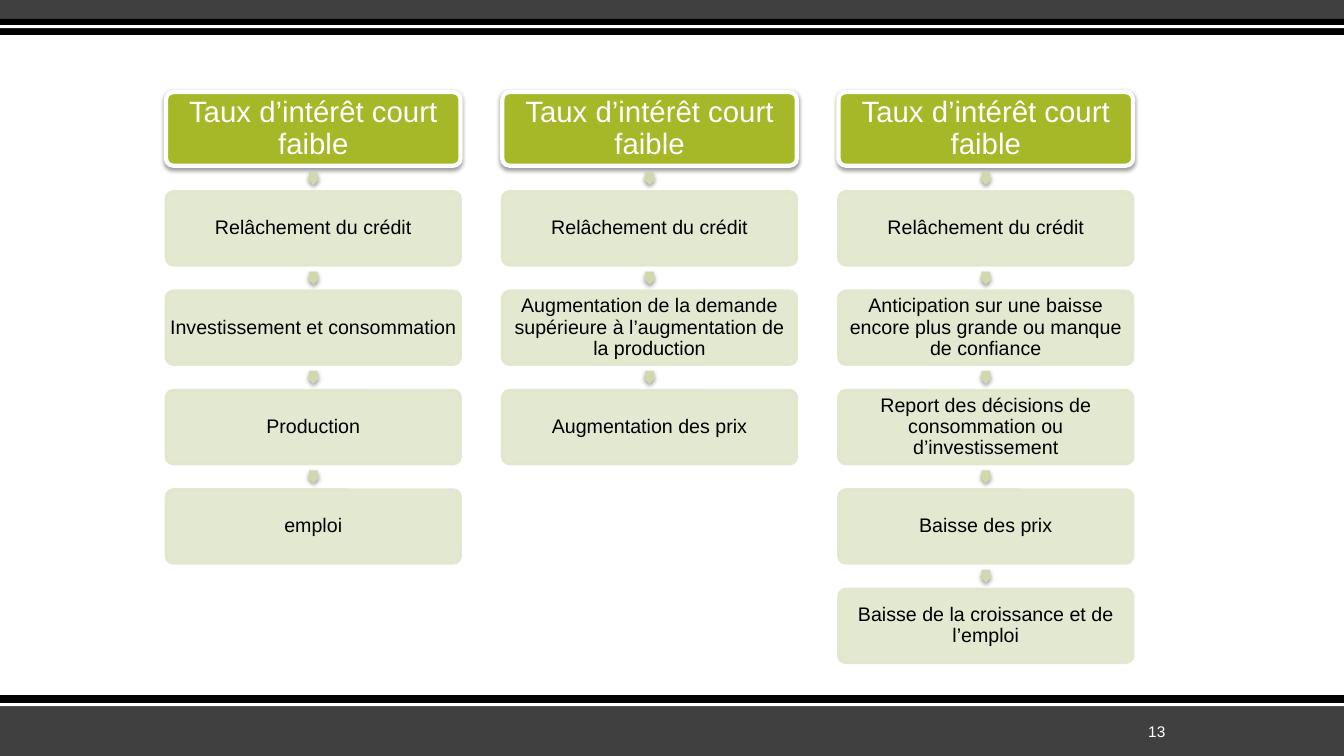
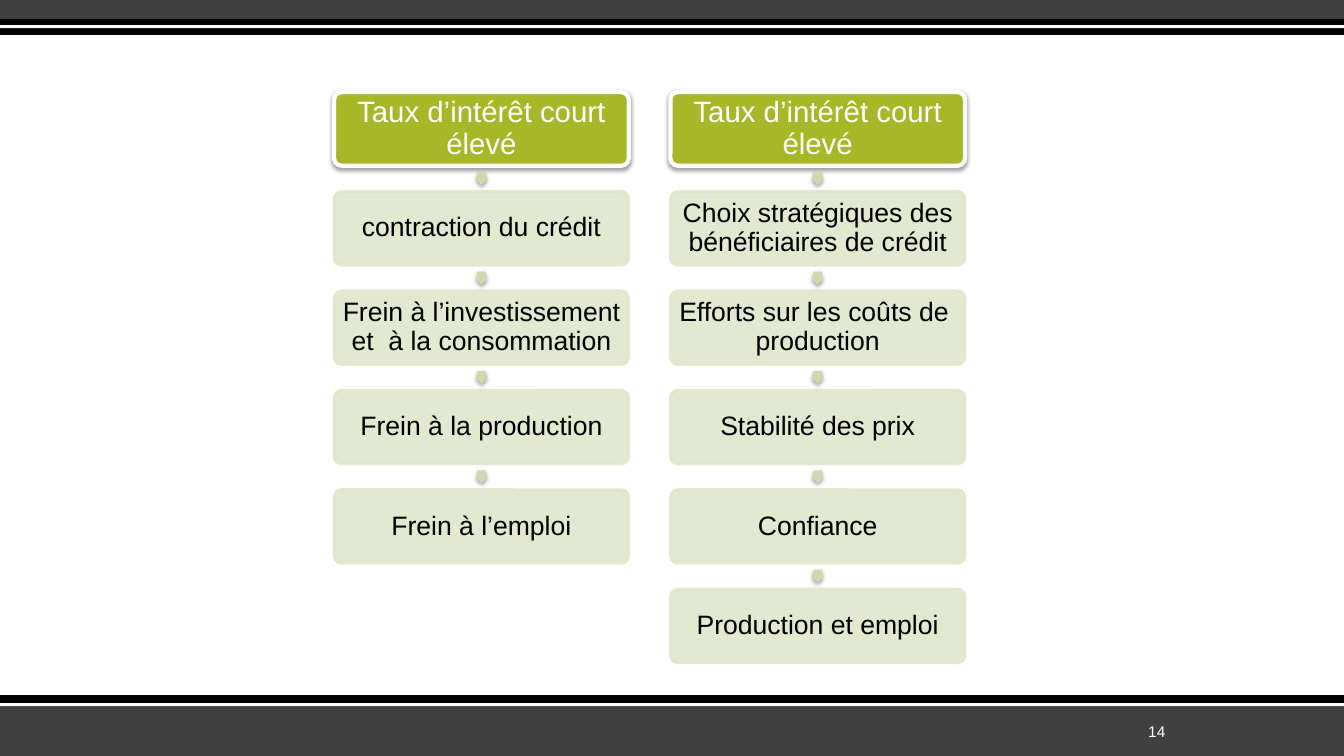
import pptx
import pptx.dml.color
import pptx.enum.shapes
import pptx.enum.text
import pptx.oxml
import pptx.oxml.ns
import pptx.util

Pt = pptx.util.Pt
SHAPES = pptx.enum.shapes.MSO_SHAPE
ALIGN = pptx.enum.text.PP_ALIGN

COLORS = {"band": "404040", "rule": "000000", "white": "FFFFFF", "header": "A6B727",
          "step": "E1E6CD", "arrow": "D0D8AD", "text": "000000"}
FONT = "Arial"
PAGE_WIDTH, PAGE_HEIGHT = 960, 540

# top, height, colour
BANDS = [
    (504, 36, "band"), (496.5, 8, "rule"), (502.2, 2.2, "white"),
    (0, 13.5, "band"), (13.5, 11.5, "rule"), (18, 2.2, "white"),
]

LOW, HIGH = "Taux d’intérêt court faible", "Taux d’intérêt court élevé"
SLIDES = [
    {"number": "13", "step_size": 14, "step_inset": 1.2, "chains": [
        (LOW, ["Relâchement du crédit", "Investissement et consommation",
               "Production", "emploi"]),
        (LOW, ["Relâchement du crédit",
               "Augmentation de la demande supérieure à l’augmentation de la production",
               "Augmentation des prix"]),
        (LOW, ["Relâchement du crédit",
               "Anticipation sur une baisse encore plus grande ou manque de confiance",
               "Report des décisions de consommation ou d’investissement",
               "Baisse des prix", "Baisse de la croissance et de l’emploi"]),
    ]},
    {"number": "14", "step_size": 19, "step_inset": 2, "chains": [
        (HIGH, ["contraction du crédit", "Frein à l’investissement et  à la consommation",
                "Frein à la production", "Frein à l’emploi"]),
        (HIGH, ["Choix stratégiques des bénéficiaires de crédit",
                "Efforts sur les coûts de  production", "Stabilité des prix",
                "Confiance", "Production et emploi"]),
    ]},
]

CHAINS_CENTER, CHAINS_TOP = 464, 65.8
BOX_WIDTH, BOX_HEIGHT = 210.4, 52.6
ARROW_SIZE = 9.2
COLUMN_PITCH = 240.2
ROW_PITCH = BOX_HEIGHT + 2 * ARROW_SIZE


def rgb(name):
    return pptx.dml.color.RGBColor.from_string(COLORS[name])


def add_filled(page, kind, left, top, width, height, color):
    shape = page.shapes.add_shape(kind, Pt(left), Pt(top), Pt(width), Pt(height))
    shape.shadow.inherit = False
    shape.fill.solid()
    shape.fill.fore_color.rgb = rgb(color)
    shape.line.fill.background()
    return shape


def add_shadow(shape):
    effects = shape._element.spPr.find(pptx.oxml.ns.qn("a:effectLst"))
    effects.append(pptx.oxml.parse_xml(
        f'<a:outerShdw {pptx.oxml.ns.nsdecls("a")} blurRad="{Pt(3.1)}" dist="{Pt(1.6)}" '
        'dir="5400000" rotWithShape="0"><a:srgbClr val="000000"><a:alpha val="38000"/>'
        '</a:srgbClr></a:outerShdw>'))


def make_translucent(shape):
    """Set the fill and the line to 90 % opacity."""
    for color in shape._element.spPr.iter(pptx.oxml.ns.qn("a:srgbClr")):
        color.append(pptx.oxml.parse_xml(
            f'<a:alpha {pptx.oxml.ns.nsdecls("a")} val="90000"/>'))


def write(shape, text, size, color, align, inset_x, inset_y):
    frame = shape.text_frame
    frame.word_wrap = True
    frame.vertical_anchor = pptx.enum.text.MSO_ANCHOR.MIDDLE
    frame.margin_left = frame.margin_right = Pt(inset_x)
    frame.margin_top = frame.margin_bottom = Pt(inset_y)
    para = frame.paragraphs[0]
    para.text = text
    para.alignment = align
    para.font.name = FONT
    para.font.size = Pt(size)
    para.font.color.rgb = rgb(color)
    return para


def add_box(page, left, top, text, size, inset, is_header):
    box = add_filled(page, SHAPES.ROUNDED_RECTANGLE, left, top, BOX_WIDTH, BOX_HEIGHT,
                     "header" if is_header else "step")
    box.adjustments[0] = 0.1
    box.line.color.rgb = rgb("white" if is_header else "step")
    box.line.width = Pt(3 if is_header else 2)
    if is_header:
        add_shadow(box)
    else:
        make_translucent(box)
    para = write(box, text, size, "white" if is_header else "text",
                 ALIGN.CENTER, inset, inset)
    para.line_spacing = 0.9


def add_arrow(page, left, top):
    arrow = add_filled(page, SHAPES.RIGHT_ARROW, left, top, ARROW_SIZE, ARROW_SIZE, "arrow")
    arrow.rotation = 90
    arrow.adjustments[0] = 0.667
    arrow.adjustments[1] = 0.5
    add_shadow(arrow)


def add_chain(page, left, header, steps, step_size, step_inset):
    add_box(page, left, CHAINS_TOP, header, 21, 2, True)
    for row, step in enumerate(steps, 1):
        top = CHAINS_TOP + row * ROW_PITCH
        add_arrow(page, left + (BOX_WIDTH - ARROW_SIZE) / 2, top - 1.5 * ARROW_SIZE)
        add_box(page, left, top, step, step_size, step_inset, False)


def add_bands(master):
    """Draw the bands on a page and move them to the back."""
    for top, height, color in BANDS:
        add_filled(master, SHAPES.RECTANGLE, 0, top, PAGE_WIDTH, height, color)


def add_page(deck, content):
    page = deck.slides.add_slide(deck.slide_layouts[6])
    add_bands(page)
    chains = content["chains"]
    first_left = CHAINS_CENTER - ((len(chains) - 1) * COLUMN_PITCH + BOX_WIDTH) / 2
    for column, (header, steps) in enumerate(chains):
        add_chain(page, first_left + column * COLUMN_PITCH, header, steps,
                  content["step_size"], content["step_inset"])
    number = page.shapes.add_textbox(Pt(766), Pt(513.5), Pt(73.5), Pt(18))
    write(number, content["number"], 11, "white", ALIGN.RIGHT, 7.2, 3.6)


def main():
    deck = pptx.Presentation()
    deck.slide_width, deck.slide_height = Pt(PAGE_WIDTH), Pt(PAGE_HEIGHT)
    for content in SLIDES:
        add_page(deck, content)
    deck.save("out.pptx")


if __name__ == "__main__":
    main()
